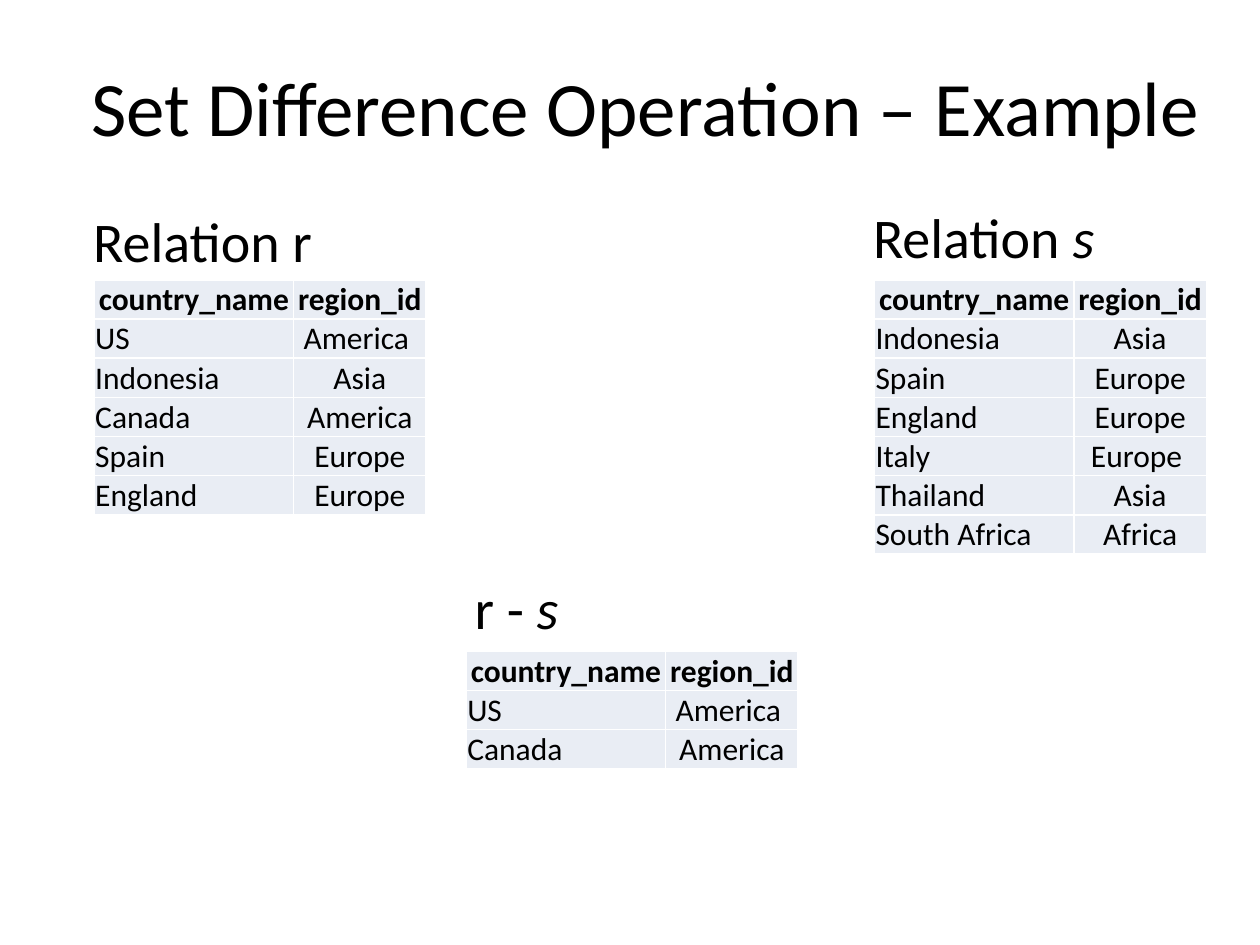
from dataclasses import dataclass

from lxml import etree
from pptx import Presentation
from pptx.dml.color import RGBColor
from pptx.enum.text import MSO_ANCHOR, PP_ALIGN
from pptx.oxml.ns import qn
from pptx.util import Cm, Pt

CENTER, LEFT = PP_ALIGN.CENTER, PP_ALIGN.LEFT
MIDDLE, TOP, BOTTOM = MSO_ANCHOR.MIDDLE, MSO_ANCHOR.TOP, MSO_ANCHOR.BOTTOM


@dataclass(frozen=True)
class Theme:
    font: str = "Calibri"
    ink: str = "000000"
    cell: str = "E9EDF4"
    border: str = "FFFFFF"
    title_size: int = 44
    caption_size: int = 32
    cell_size: int = 18
    border_width: int = 1


THEME = Theme()
HEADER = ("country_name", "region_id")
COLUMN_WIDTHS = (4.02, 2.67)
ROW_HEIGHT = 0.79
CELL_INSET = 0.02
CAPTION_SIZE = (8.69, 10.24)

RELATION_R = [
    ("US", "America "),
    ("Indonesia", "Asia"),
    ("Canada", "America"),
    ("Spain", "Europe"),
    ("England", "Europe"),
]
RELATION_S = [
    ("Indonesia", "Asia"),
    ("Spain", "Europe"),
    ("England", "Europe"),
    ("Italy", "Europe "),
    ("Thailand", "Asia"),
    ("South Africa", "Africa"),
]
DIFFERENCE = [RELATION_R[0], RELATION_R[2]]


def add_run(paragraph, text, size, bold=False, italic=False):
    run = paragraph.add_run()
    run.text = text
    run.font.name = THEME.font
    run.font.size = Pt(size)
    run.font.bold = bold
    run.font.italic = italic
    run.font.color.rgb = RGBColor.from_string(THEME.ink)


def add_text(slide, box, runs, size, align=LEFT, anchor=TOP):
    frame = slide.shapes.add_textbox(*map(Cm, box)).text_frame
    frame.word_wrap = True
    frame.vertical_anchor = anchor
    paragraph = frame.paragraphs[0]
    paragraph.alignment = align
    for text, italic in runs:
        add_run(paragraph, text, size, italic=italic)


def add_borders(cell):
    properties = cell._tc.get_or_add_tcPr()
    for side in ("a:lnL", "a:lnR", "a:lnT", "a:lnB"):
        line = etree.SubElement(properties, qn(side), w=str(Pt(THEME.border_width)))
        fill = etree.SubElement(line, qn("a:solidFill"))
        etree.SubElement(fill, qn("a:srgbClr"), val=THEME.border)


def fill_cell(cell, text, align, bold):
    add_borders(cell)
    cell.fill.solid()
    cell.fill.fore_color.rgb = RGBColor.from_string(THEME.cell)
    cell.vertical_anchor = BOTTOM
    cell.margin_left = cell.margin_right = cell.margin_top = Cm(CELL_INSET)
    cell.margin_bottom = 0
    paragraph = cell.text_frame.paragraphs[0]
    paragraph.alignment = align
    add_run(paragraph, text, THEME.cell_size, bold=bold)


def add_relation(slide, left, top, caption, caption_offset, tuples):
    dx, dy = caption_offset
    add_text(slide, (left + dx, top + dy, *CAPTION_SIZE), caption, THEME.caption_size)

    rows = [HEADER, *tuples]
    box = (left, top, sum(COLUMN_WIDTHS), ROW_HEIGHT * len(rows))
    table = slide.shapes.add_table(len(rows), len(HEADER), *map(Cm, box)).table
    table.horz_banding = False
    for column, width in zip(table.columns, COLUMN_WIDTHS):
        column.width = Cm(width)
    for r, values in enumerate(rows):
        table.rows[r].height = Cm(ROW_HEIGHT)
        for c, value in enumerate(values):
            is_header = r == 0
            align = CENTER if is_header or c == 1 else LEFT
            fill_cell(table.cell(r, c), value, align, is_header)


def add_title(slide, box):
    title = [("Set Difference Operation – Example", False)]
    add_text(slide, box, title, THEME.title_size, CENTER, MIDDLE)


def main():
    deck = Presentation()
    deck.slide_width, deck.slide_height = Cm(25.4), Cm(19.05)
    slide = deck.slides.add_slide(deck.slide_layouts[6])

    add_title(slide, (0.64, 0.79, 24.76, 2.67))
    add_relation(slide, 1.9, 5.64, [("Relation r", False)], (-0.27, -1.6), RELATION_R)
    add_relation(slide, 17.63, 5.64, [("Relation ", False), ("s", True)],
                 (-0.28, -1.68), RELATION_S)
    add_relation(slide, 9.4, 13.13, [("r - ", False), ("s", True)],
                 (-0.08, -1.7), DIFFERENCE)
    deck.save("out.pptx")


if __name__ == "__main__":
    main()
